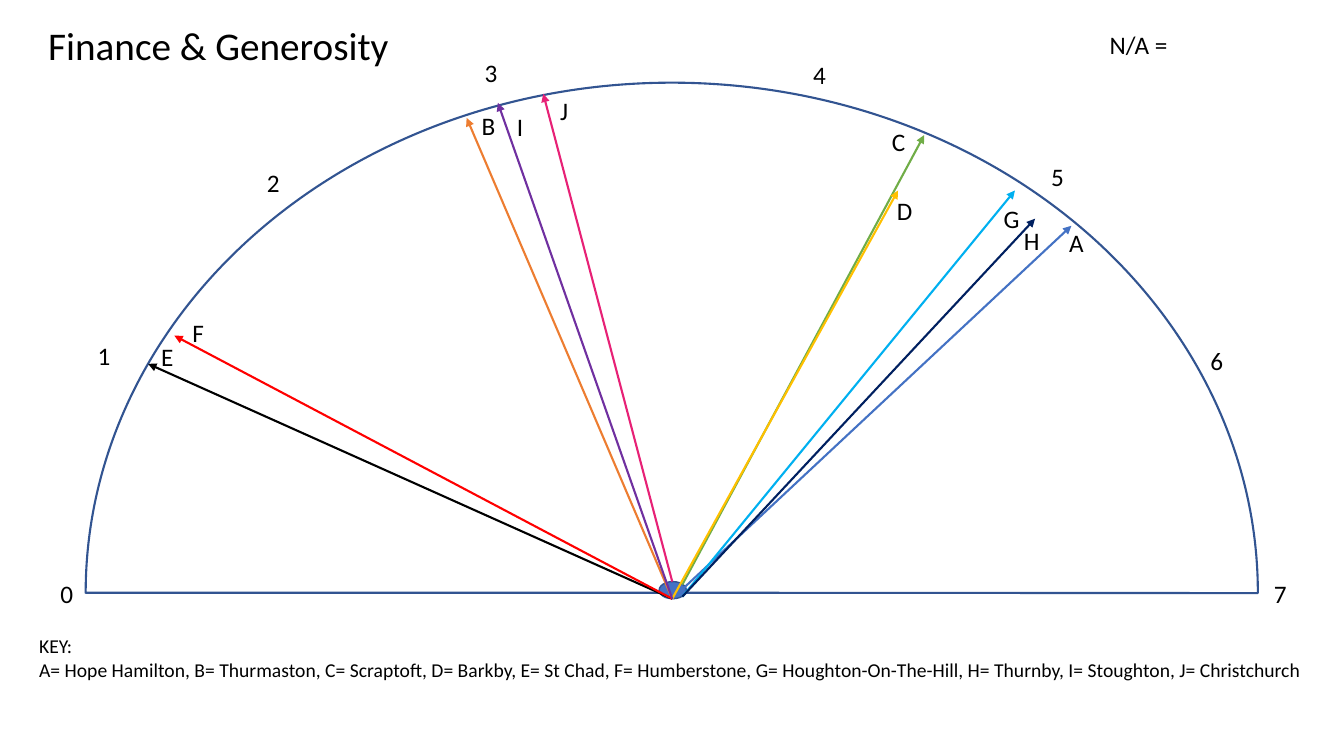
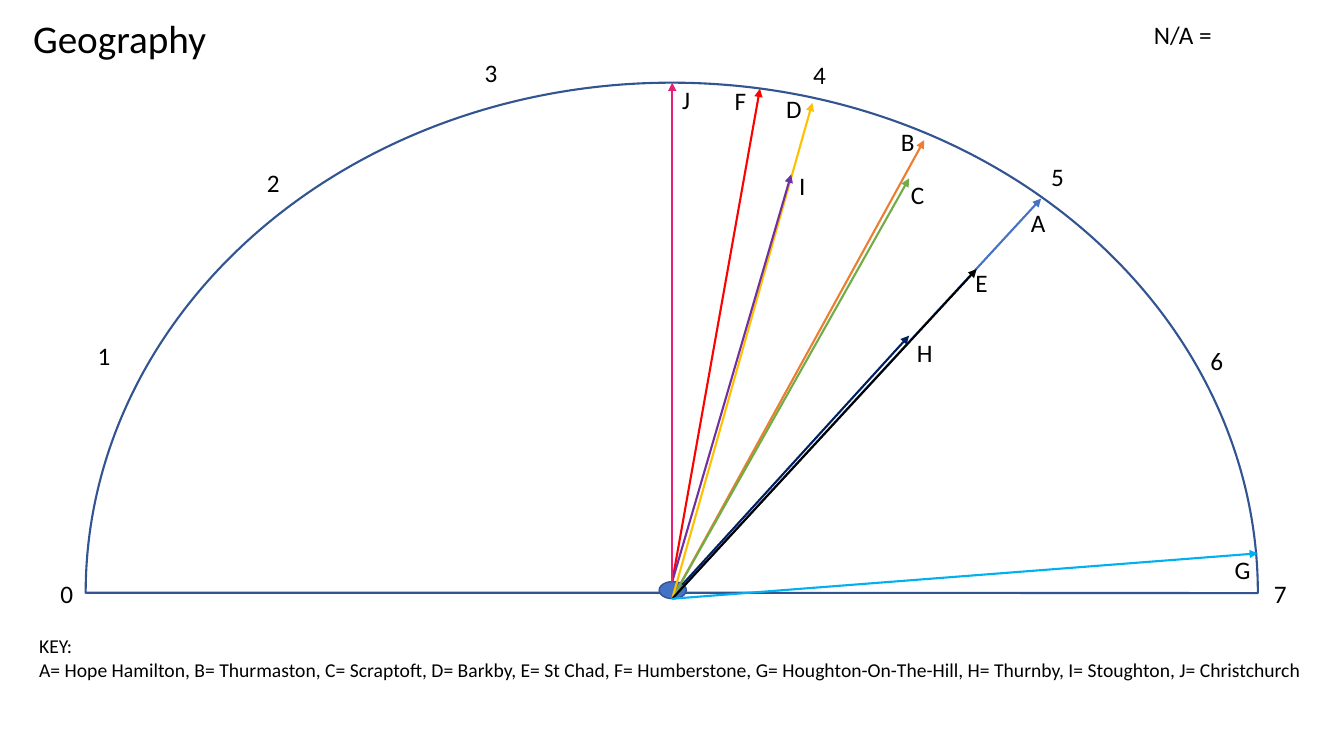
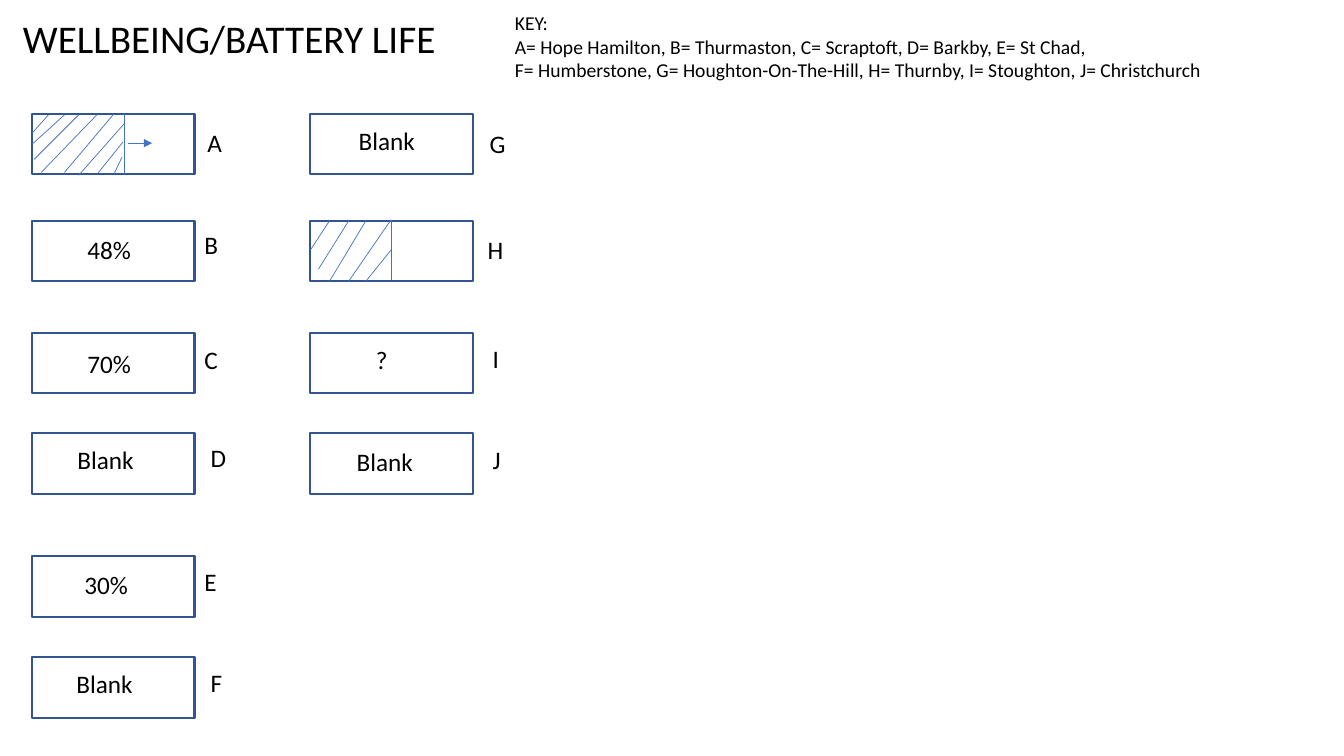
from lxml import etree
from pptx import Presentation
from pptx.dml.color import RGBColor
from pptx.enum.shapes import MSO_CONNECTOR, MSO_SHAPE
from pptx.enum.text import MSO_AUTO_SIZE
from pptx.oxml.ns import qn
from pptx.util import Cm, Pt

INCH = 2.54  # positions below are in inches, handed over as centimetres
COLOURS = {
    "text": "000000", "outline": "325491", "accent": "4472C4",
    "A": "4472C4", "B": "ED7D31", "C": "70AD47", "D": "FFC000", "E": "000000",
    "F": "FF0000", "G": "00B0F0", "H": "002060", "I": "7030A0", "J": "E72176",
}
FORMATS = {
    "title": {"name": "Calibri", "size": Pt(28)},
    "label": {"name": "Calibri", "size": Pt(18)},
    "key": {"name": "Calibri", "size": Pt(14)},
}
KEY_FIRST = "A= Hope Hamilton, B= Thurmaston, C= Scraptoft, D= Barkby, E= St Chad,"
KEY_SECOND = "F= Humberstone, G= Houghton-On-The-Hill, H= Thurnby, I= Stoughton, J= Christchurch"


def add_text(slide, lines, box, style="label"):
    shape = slide.shapes.add_textbox(*[Cm(INCH * value) for value in box])
    frame = shape.text_frame
    frame.word_wrap = True
    frame.auto_size = MSO_AUTO_SIZE.SHAPE_TO_FIT_TEXT
    frame.text = "\n".join(lines)
    for paragraph in frame.paragraphs:
        font = paragraph.runs[0].font
        font.color.rgb = RGBColor.from_string(COLOURS["text"])
        for attribute, value in FORMATS[style].items():
            setattr(font, attribute, value)


def add_line(slide, start, end, colour, width, arrow=False):
    points = [Cm(INCH * value) for value in (*start, *end)]
    connector = slide.shapes.add_connector(MSO_CONNECTOR.STRAIGHT, *points)
    connector.line.color.rgb = RGBColor.from_string(COLOURS[colour])
    connector.line.width = Pt(width)
    if arrow:
        etree.SubElement(connector.line._get_or_add_ln(), qn("a:tailEnd"), type="triangle")
    etree.SubElement(connector._element.spPr, qn("a:effectLst"))


presentation = Presentation()
presentation.slide_width, presentation.slide_height = Cm(33.87), Cm(19.05)
blank_layout = presentation.slide_layouts[6]

# Dial: scale numbers and the points where arrows start
SCALE = [(0.5, 5.69), (0.87, 3.33), (2.55, 1.61), (4.71, 0.52),
         (7.97, 0.54), (10.33, 1.55), (11.91, 3.38), (12.54, 5.69)]
BASE, TOP = (6.67, 5.94), (6.67, 5.77)
RIGHT, UPPER_RIGHT = (6.77, 5.92), (6.77, 5.8)

# Each arrow: letter, start, tip, and left, top and width of its label
dials = [
    {
        "title": "Finance & Generosity", "title_box": (0.38, 0.16, 3.86, 0.57),
        "note_box": (10.91, 0.24, 3.68, 0.4),
        "arrows": [
            ("A", BASE, (10.63, 2.24), (10.51, 2.21, 0.31)),
            ("B", BASE, (4.63, 1.17), (4.68, 1.05, 0.4)),
            ("C", UPPER_RIGHT, (9.17, 1.34), (8.75, 1.2, 0.33)),
            ("D", BASE, (8.91, 1.89), (8.8, 1.89, 0.33)),
            ("E", BASE, (1.47, 3.61), (1.5, 3.34, 0.39)),
            ("F", BASE, (1.73, 3.33), (1.81, 3.1, 0.39)),
            ("G", RIGHT, (10.07, 1.89), (9.86, 1.97, 0.41)),
            ("H", RIGHT, (10.27, 2.17), (10.06, 2.19, 0.47)),
            ("I", BASE, (4.94, 1.02), (5.03, 1.06, 0.26)),
            ("J", TOP, (5.39, 0.93), (5.46, 0.9, 0.37)),
        ],
    },
    {
        "title": "Geography", "title_box": (0.23, 0.09, 6.07, 0.57),
        "note_box": (11.35, 0.14, 4.17, 0.4),
        "arrows": [
            ("A", BASE, (10.33, 1.97), (10.13, 2.01, 0.28)),
            ("B", BASE, (9.17, 1.39), (8.84, 1.2, 0.39)),
            ("C", BASE, (9.02, 1.77), (8.94, 1.73, 0.28)),
            ("D", BASE, (8.06, 1.02), (7.7, 0.88, 0.42)),
            ("E", BASE, (9.69, 2.67), (9.58, 2.6, 0.4)),
            ("F", TOP, (7.54, 0.88), (7.19, 0.8, 0.4)),
            ("G", BASE, (12.48, 5.49), (12.15, 5.45, 0.25)),
            ("H", UPPER_RIGHT, (9.02, 3.33), (9, 3.3, 0.54)),
            ("I", TOP, (7.85, 1.73), (7.83, 1.64, 0.38)),
            ("J", TOP, (6.67, 0.82), (6.67, 0.79, 0.4)),
        ],
    },
]

for dial in dials:
    slide = presentation.slides.add_slide(blank_layout)
    add_text(slide, [dial["title"]], dial["title_box"], "title")
    add_text(slide, ["N/A ="], dial["note_box"])

    # Half circle and its pivot
    half_circle = slide.shapes.add_shape(
        MSO_SHAPE.PIE, *[Cm(INCH * value) for value in (0.85, 0.82, 11.63, 10.12)])
    half_circle.adjustments[0], half_circle.adjustments[1] = 0, 108.02
    half_circle.rotation = 180
    half_circle.fill.background()
    pivot = slide.shapes.add_shape(
        MSO_SHAPE.OVAL, *[Cm(INCH * value) for value in (6.54, 5.77, 0.27, 0.17)])
    pivot.fill.solid()
    pivot.fill.fore_color.rgb = RGBColor.from_string(COLOURS["accent"])
    for shape, width in ((half_circle, 1.5), (pivot, 1)):
        shape.shadow.inherit = False
        shape.line.color.rgb = RGBColor.from_string(COLOURS["outline"])
        shape.line.width = Pt(width)
    for number, (left, top) in enumerate(SCALE):
        add_text(slide, [str(number)], (left, top, 0.4, 0.5))

    # Arrows with their letters, then the key
    for letter, start, tip, label in dial["arrows"]:
        add_line(slide, start, tip, letter, 1.5, arrow=True)
        add_text(slide, [letter], (*label, 0.4))
    add_text(slide, ["KEY:", f"{KEY_FIRST} {KEY_SECOND}"], (0.29, 6.24, 13.04, 0.57), "key")

# Battery slide
slide = presentation.slides.add_slide(blank_layout)
add_text(slide, ["WELLBEING/BATTERY LIFE"], (0.13, 0.09, 5.06, 0.57), "title")
add_text(slide, ["KEY:", KEY_FIRST, KEY_SECOND], (5.01, 0.06, 7.61, 0.81), "key")

COLUMNS = (0.32, 3.08)
ROWS = (1.13, 2.19, 3.3, 4.3, 5.52, 6.52)
# Each battery: letter, letter position, level, and left, top and width of the level
batteries = [
    ("A", (1.96, 1.21), None, None),
    ("B", (1.93, 2.23), "48%", (0.77, 2.28, 0.8)),
    ("C", (1.93, 3.37), "70%", (0.77, 3.41, 0.8)),
    ("D", (1.99, 4.34), "Blank", (0.67, 4.36, 1.02)),
    ("E", (1.93, 5.57), "30%", (0.74, 5.6, 0.93)),
    ("F", (1.99, 6.57), "Blank", (0.66, 6.58, 1.29)),
    ("G", (4.76, 1.22), "Blank", (3.46, 1.19, 1.21)),
    ("H", (4.74, 2.28), None, None),
    ("I", (4.79, 3.36), "?", (3.63, 3.37, 0.32)),
    ("J", (4.79, 4.36), "Blank", (3.44, 4.38, 0.89)),
]
for index, (letter, position, level, level_box) in enumerate(batteries):
    column, row = divmod(index, len(ROWS))
    battery = slide.shapes.add_shape(
        MSO_SHAPE.RECTANGLE,
        *[Cm(INCH * value) for value in (COLUMNS[column], ROWS[row], 1.61, 0.6)])
    battery.shadow.inherit = False
    battery.fill.background()
    battery.line.color.rgb = RGBColor.from_string(COLOURS["outline"])
    battery.line.width = Pt(1.5)
    add_text(slide, [letter], (*position, 0.45, 0.4))
    if level:
        add_text(slide, [level], (*level_box, 0.4))

# Level marks and hatching of batteries A and H
strokes = [
    ((1.23, 1.13), (1.23, 1.73)), ((0.48, 1.14), (0.32, 1.32)),
    ((0.64, 1.14), (0.32, 1.43)), ((0.78, 1.14), (0.34, 1.58)),
    ((0.96, 1.14), (0.41, 1.71)), ((1.13, 1.13), (0.64, 1.71)),
    ((0.78, 1.74), (1.23, 1.23)), ((0.97, 1.72), (1.22, 1.41)),
    ((1.13, 1.73), (1.21, 1.56)),
    ((3.88, 2.18), (3.88, 2.78)), ((3.27, 2.19), (3.08, 2.48)),
    ((3.46, 2.19), (3.16, 2.67)), ((3.63, 2.19), (3.27, 2.79)),
    ((3.88, 2.18), (3.46, 2.79)), ((3.88, 2.48), (3.63, 2.79)),
]
for start, end in strokes:
    add_line(slide, start, end, "accent", 0.5)
add_line(slide, (1.27, 1.42), (1.51, 1.42), "accent", 0.5, arrow=True)

presentation.save("out.pptx")
